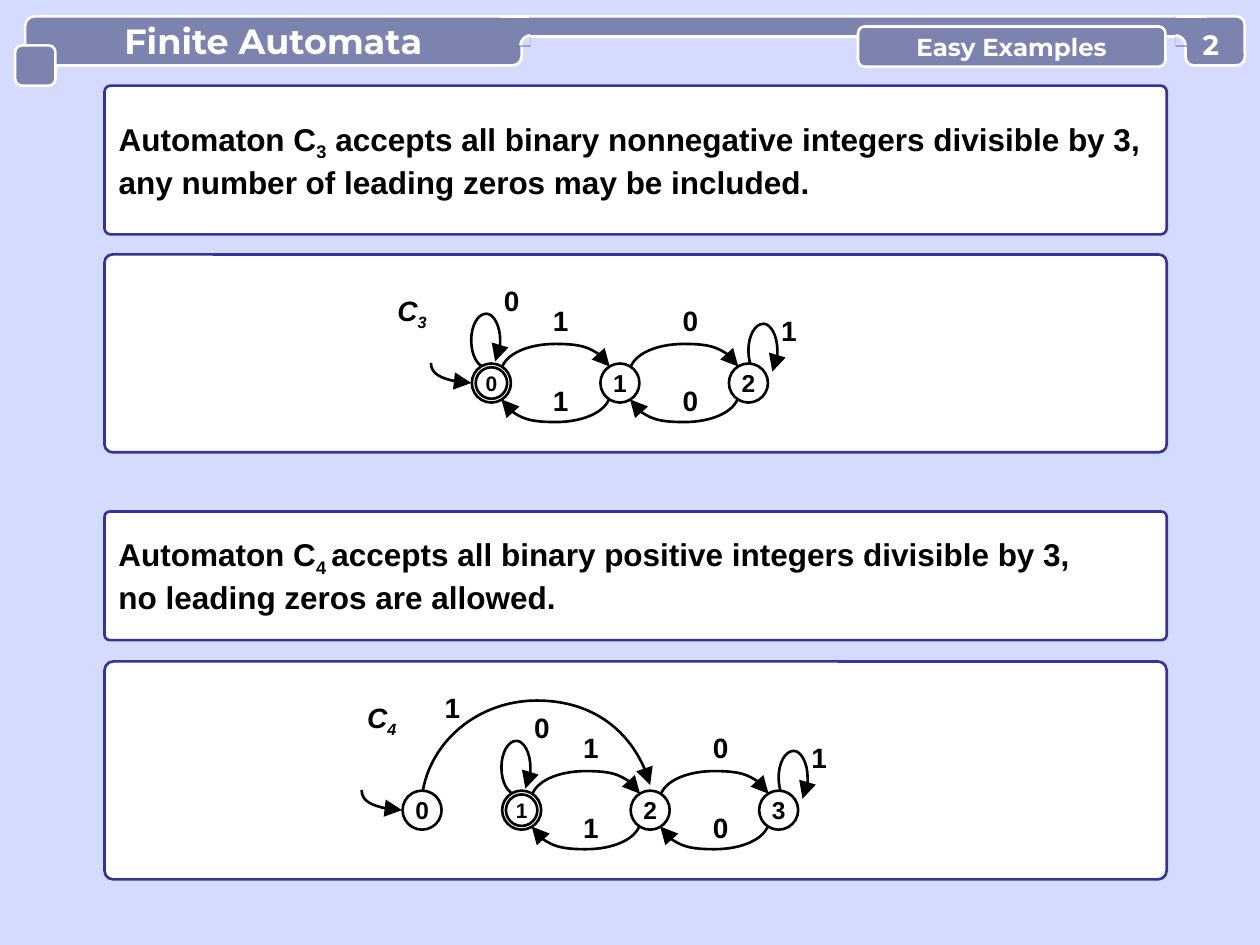
from lxml import etree
from pptx import Presentation
from pptx.dml.color import RGBColor
from pptx.enum.shapes import MSO_CONNECTOR, MSO_SHAPE
from pptx.enum.text import MSO_ANCHOR, PP_ALIGN
from pptx.oxml.ns import qn
from pptx.util import Inches, Pt

ROUNDED = MSO_SHAPE.ROUNDED_RECTANGLE
RECTANGLE = MSO_SHAPE.RECTANGLE
ELLIPSE = MSO_SHAPE.OVAL
STRAIGHT = MSO_CONNECTOR.STRAIGHT
MIDDLE = MSO_ANCHOR.MIDDLE
TOP = MSO_ANCHOR.TOP
CENTER = PP_ALIGN.CENTER
LEFT = PP_ALIGN.LEFT

SKY = RGBColor(0xD5, 0xDA, 0xFF)
SLATE = RGBColor(0x7D, 0x83, 0xAF)
NAVY = RGBColor(0x33, 0x33, 0x99)
WHITE = RGBColor(0xFF, 0xFF, 0xFF)
BLACK = RGBColor(0x00, 0x00, 0x00)

STEP = 1.02
STATE_SIZE = 0.31
LABEL_SIZE = 0.32
UPPER_ARC = [(0.94, -0.13), (0.9, -0.24), (0.72, -0.31), (0.51, -0.31),
             (0.29, -0.31), (0.11, -0.23), (0.08, -0.11)]
LOWER_ARC = [(STEP - x, -y) for x, y in UPPER_ARC]
LOOP = [(0.03, -0.17), (0.06, -0.21), (0.07, -0.27), (0.07, -0.34),
        (0.07, -0.45), (0.02, -0.55), (-0.04, -0.55),
        (-0.11, -0.55), (-0.16, -0.45), (-0.16, -0.34),
        (-0.16, -0.22), (-0.11, -0.13), (-0.04, -0.12)]
START_ARC = [(-0.16, 0), (-0.33, 0), (-0.48, -0.07), (-0.48, -0.16)]
LONG_ARC = [(1.02, -0.2), (0.92, -0.59), (0.55, -0.87), (0.12, -0.87),
            (-0.34, -0.87), (-0.73, -0.55), (-0.79, -0.12)]
EDGE_LABELS = [("0", 0.16, -0.63), ("1", 0.55, -0.47), ("1", 0.55, 0.16),
               ("0", 1.58, -0.47), ("0", 1.58, 0.16), ("1", 2.36, -0.39)]


def write(box, lines, size, color=BLACK, font="Arial", align=CENTER,
          anchor=MIDDLE, inset=0, wrap=False, italic=False):
    margin = Inches(inset)
    frame_format = {"word_wrap": wrap, "vertical_anchor": anchor,
                    "margin_left": margin, "margin_right": margin,
                    "margin_top": margin, "margin_bottom": margin}
    for name, value in frame_format.items():
        setattr(box.text_frame, name, value)
    font_format = {"name": font, "size": Pt(size), "bold": True, "italic": italic}
    for index, pieces in enumerate(lines):
        para = box.text_frame.add_paragraph() if index else box.text_frame.paragraphs[0]
        para.alignment = align
        for position, piece in enumerate(pieces):
            span = para.add_run()
            span.text = piece
            for name, value in font_format.items():
                setattr(span.font, name, value)
            span.font.color.rgb = color
            if position == 1:
                span._r.get_or_add_rPr().set("baseline", "-25000")


def paint(shape, fill=None, line=None):
    shape.shadow.inherit = False
    if fill is None:
        shape.fill.background()
    else:
        shape.fill.solid()
        shape.fill.fore_color.rgb = fill
    if line is None:
        shape.line.fill.background()
    else:
        shape.line.color.rgb = line
        shape.line.width = Pt(1.5)


def add_box(page, kind, place, fill, line=None, rounding=None):
    box = page.shapes.add_shape(kind, *map(Inches, place))
    paint(box, fill, line)
    if rounding is not None:
        box.adjustments[0] = rounding
    return box


def add_curve(page, points, fill=None, line=None, arrow=False, closed=False):
    corners = [(Inches(x), Inches(y)) for x, y in points]
    builder = page.shapes.build_freeform(*corners[0])
    builder.add_line_segments(corners[1:], close=closed)
    curve = builder.convert_to_shape()
    paint(curve, fill, line)
    segments = list(curve._element.iter(qn("a:lnTo")))
    for first in range(0, len(segments) - 2, 3):
        bezier = etree.Element(qn("a:cubicBezTo"))
        segments[first].addprevious(bezier)
        for segment in segments[first:first + 3]:
            bezier.append(segment[0])
            segment.getparent().remove(segment)
    if arrow:
        etree.SubElement(curve.line._get_or_add_ln(), qn("a:headEnd"),
                         type="triangle", w="lg", len="lg")


def add_arrow(page, points, x, y):
    add_curve(page, [(x + dx, y + dy) for dx, dy in points], line=BLACK, arrow=True)


def add_circle(page, x, y, size):
    return add_box(page, ELLIPSE, (x - size / 2, y - size / 2, size, size), WHITE, BLACK)


def add_state(page, name, x, y, accepting=False):
    circle = add_circle(page, x, y, STATE_SIZE)
    if accepting:
        circle = add_circle(page, x, y, 0.25)
    write(circle, [[name]], 12 if accepting else 14)


def add_label(page, pieces, x, y, italic=False):
    label = page.shapes.add_textbox(Inches(x - LABEL_SIZE / 2), Inches(y - LABEL_SIZE / 2),
                                    Inches(LABEL_SIZE), Inches(LABEL_SIZE))
    write(label, [pieces], 16, anchor=TOP, wrap=True, italic=italic)


def add_automaton(page, x, y, names):
    for shift in (0, STEP):
        add_arrow(page, LOWER_ARC, x + shift, y)
        add_arrow(page, UPPER_ARC, x + shift, y)
    add_arrow(page, LOOP, x, y)
    add_arrow(page, LOOP, x + 2.2, y + 0.08)
    for index, name in enumerate(names):
        add_state(page, name, x + index * STEP, y, accepting=index == 0)
    for text, dx, dy in EDGE_LABELS:
        add_label(page, [text], x + dx, y + dy)


def add_fillet(page, tip, toward):
    width = 0.24
    end = tip + toward * width
    add_box(page, RECTANGLE, (min(tip, end), 0.13, width, width), SLATE)
    edge = page.shapes.add_connector(STRAIGHT, Inches(tip), Inches(0.13),
                                     Inches(end), Inches(0.13))
    edge.line.color.rgb = WHITE
    edge.line.width = Pt(1.5)
    etree.SubElement(edge._element.spPr, qn("a:effectLst"))
    inner = tip + toward * 0.08
    arc = [(tip, 0.28), (tip + toward * 0.04, 0.28), (inner, 0.32), (inner, 0.36)]
    add_curve(page, arc + [(tip, 0.36)], fill=SKY, closed=True)
    add_curve(page, arc, line=WHITE)


def add_header(page):
    title = add_box(page, ROUNDED, (0.2, 0.13, 3.94, 0.39), SLATE, WHITE, 0.19)
    write(title, [["Finite Automata"]], 20, WHITE, "Montserrat")
    add_box(page, ROUNDED, (4.06, 0.13, 5.43, 0.16), SLATE, WHITE, 0.5)
    add_fillet(page, 4.21, -1)
    add_box(page, ROUNDED, (0.12, 0.36, 0.32, 0.32), SLATE, WHITE, 0.17)
    add_box(page, ROUNDED, (9.41, 0.13, 0.47, 0.39), SLATE, WHITE, 0.17)
    add_fillet(page, 9.33, 1)
    topic = add_box(page, ROUNDED, (6.81, 0.21, 2.44, 0.32), SLATE, WHITE, 0.17)
    write(topic, [["Easy Examples"]], 14, WHITE, "Montserrat")
    number = page.shapes.add_textbox(Inches(9.41), Inches(0.22), Inches(0.4), Inches(0.27))
    write(number, [["2"]], 16, WHITE, "Montserrat", wrap=True)


def add_panel(page, top, height, lines=()):
    panel = add_box(page, ROUNDED, (0.83, top, 8.43, height), WHITE, NAVY, 0.04)
    write(panel, lines, 18, align=LEFT, inset=0.1, wrap=True)


def main():
    deck = Presentation()
    deck.slide_width, deck.slide_height = Inches(10), Inches(7.5)
    page = deck.slides.add_slide(deck.slide_layouts[6])
    page.background.fill.solid()
    page.background.fill.fore_color.rgb = SKY
    add_header(page)

    add_panel(page, 0.68, 1.18, [
        ["Automaton C", "3", " accepts all binary nonnegative integers divisible by 3,"],
        ["any number of leading zeros may be included."]])
    add_panel(page, 2.02, 1.57)
    x, y = 3.9, 3.04
    add_arrow(page, START_ARC, x, y)
    add_automaton(page, x, y, "012")
    add_label(page, ["C", "3"], x - 0.63, y - 0.55, italic=True)

    add_panel(page, 4.06, 1.02, [
        ["Automaton C", "4 ", "accepts all binary positive integers divisible by 3,"],
        ["no leading zeros are allowed."]])
    add_panel(page, 5.25, 1.73)
    x, y = 4.14, 6.43
    start = x - 0.79
    add_arrow(page, START_ARC, start, y)
    add_arrow(page, LONG_ARC, x, y)
    add_automaton(page, x, y, "123")
    add_state(page, "0", start, y)
    add_label(page, ["1"], x - 0.55, y - 0.79)
    add_label(page, ["C", "4"], x - 1.11, y - 0.71, italic=True)
    deck.save("out.pptx")


if __name__ == "__main__":
    main()
